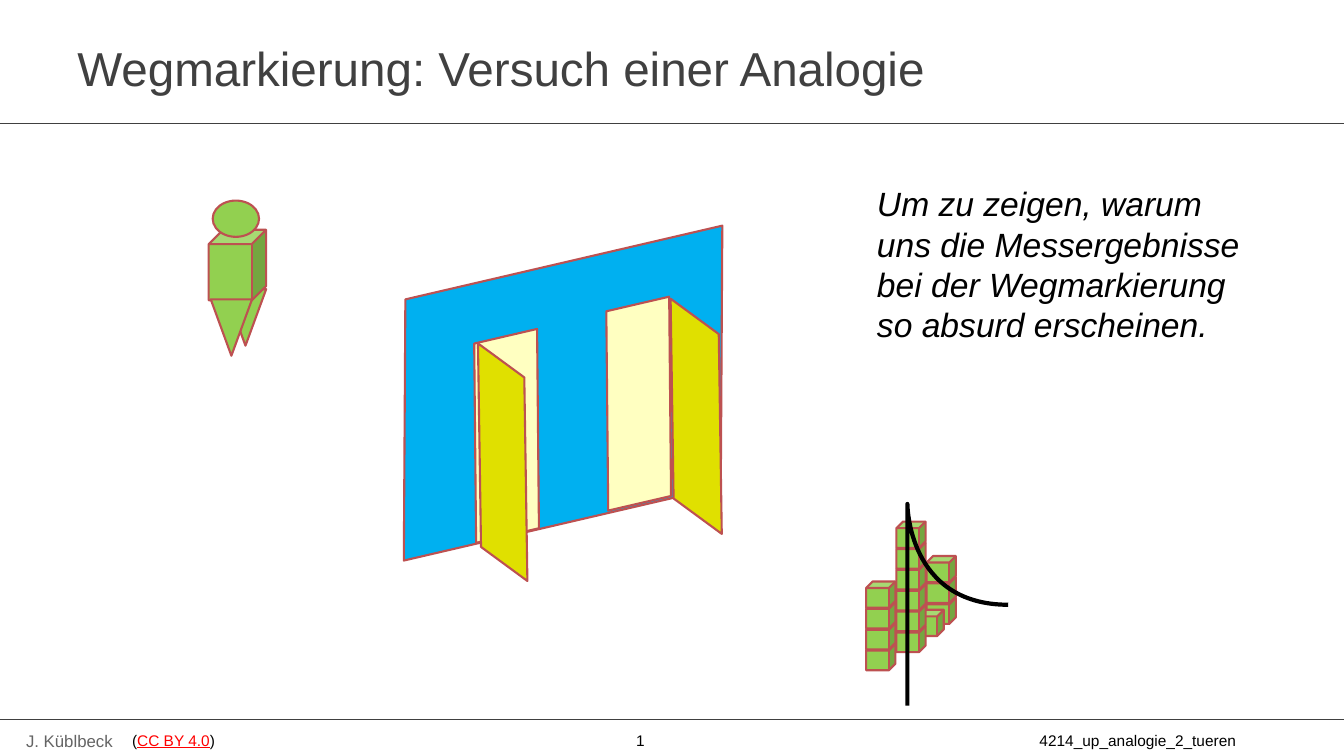
from lxml import etree
from pptx import Presentation
from pptx.dml.color import RGBColor
from pptx.enum.shapes import MSO_CONNECTOR, MSO_SHAPE
from pptx.enum.text import MSO_ANCHOR
from pptx.oxml.ns import qn
from pptx.util import Inches, Pt

COLORS = {
    "title": "404040", "rule": "404040", "author": "646464", "text": "000000",
    "link": "FF0000", "outline": "BD5151", "green": "92D050", "wall": "00B0F0",
    "opening": "FFFFC1", "door": "E0E000",
}
CUBE = (0.29, 0.26)
CUBE_STEP = 0.207


def rgb(name):
    return RGBColor.from_string(COLORS[name])


def style_font(font, size, color, italic=None):
    font.name = "Arial"
    font.size = Pt(size)
    font.italic = italic
    font.color.rgb = rgb(color)


def add_text(slide, box, text, size, color, italic=None, anchor=MSO_ANCHOR.TOP):
    tb = slide.shapes.add_textbox(*map(Inches, box))
    tf = tb.text_frame
    tf.word_wrap = True
    tf.vertical_anchor = anchor
    p = tf.paragraphs[0]
    p.text = text
    style_font(p.font, size, color, italic)
    return tf


def add_rule(slide, y):
    line = slide.shapes.add_connector(
        MSO_CONNECTOR.STRAIGHT, 0, Inches(y), Inches(13.33), Inches(y))
    line.line.color.rgb = rgb("rule")
    line.line.width = Pt(0.75)
    etree.SubElement(line._element.spPr, qn("a:effectLst"))


def add_part(group, kind, box, fill, rotation=0, flip=None, adj=None):
    """Add an outlined preset shape; flip is 'flipH' or 'flipV'."""
    sp = group.shapes.add_shape(kind, *map(Inches, box))
    sp.shadow.inherit = False
    sp.fill.solid()
    sp.fill.fore_color.rgb = rgb(fill)
    sp.line.color.rgb = rgb("outline")
    sp.line.width = Pt(1.5)
    sp.rotation = rotation
    if adj is not None:
        sp.adjustments[0] = adj
    if flip:
        sp._element.spPr.find(qn("a:xfrm")).set(flip, "1")


def add_figure(slide, x, y):
    group = slide.shapes.add_group_shape()
    leg = (0.41, 0.56)
    add_part(group, MSO_SHAPE.ISOSCELES_TRIANGLE, (x + 0.16, y + 0.88, *leg), "green", flip="flipV")
    add_part(group, MSO_SHAPE.CUBE, (x, y + 0.29, 0.57, 0.7), "green")
    add_part(group, MSO_SHAPE.OVAL, (x + 0.04, y, 0.46, 0.36), "green")
    add_part(group, MSO_SHAPE.ISOSCELES_TRIANGLE, (x + 0.02, y + 0.98, *leg), "green", flip="flipV")


def add_wall_with_doors(slide, x, y):
    group = slide.shapes.add_group_shape()
    kind = MSO_SHAPE.PARALLELOGRAM
    tilt = 346.9
    add_part(group, kind, (x, y, 3.83, 2.52), "wall", tilt, adj=0.239)
    for dx, dy in ((0.82, 0.72), (2.13, 0.4)):
        add_part(group, kind, (x + dx, y + dy, 1.07, 1.93), "opening", tilt, adj=0.402)
    for dx, dy, height in ((0.42, 1.14, 1.61), (2.34, 0.7, 1.58)):
        add_part(group, kind, (x + dx, y + dy, 1.79, height), "door", 216.3, "flipH", 0.758)


def add_curve(group, points):
    """Draw a Bezier curve: a start point, then triples of two controls and an end."""
    builder = group.shapes.build_freeform(*points[0], scale=Inches(1))
    builder.add_line_segments(points[1:], close=False)
    sp = builder.convert_to_shape()
    sp.shadow.inherit = False
    sp.fill.background()
    sp.line.color.rgb = rgb("text")
    sp.line.width = Pt(3)
    path = next(sp._element.iter(qn("a:path")))
    segments = path.findall(qn("a:lnTo"))
    for i in range(0, len(segments), 3):
        curve = etree.SubElement(path, qn("a:cubicBezTo"))
        for segment in segments[i:i + 3]:
            curve.append(segment[0])
            path.remove(segment)


def add_histogram(slide, x, y):
    group = slide.shapes.add_group_shape()
    # left offset, top offset of the lowest cube, number of cubes
    for dx, dy, count in ((0.61, 0.75, 3), (0.49, 0.87, 1), (0.31, 1.03, 6), (0.01, 1.21, 4)):
        for level in range(count):
            top = y + dy - level * CUBE_STEP
            add_part(group, MSO_SHAPE.CUBE, (x + dx, top, *CUBE), "green")
    offsets = [
        (0, 1.35),
        (0.06, 1), (0.05, 0.66), (0.12, 0.64),
        (0.18, 0.61), (0.33, 1.31), (0.39, 1.21),
        (0.45, 1.12), (0.43, 0.1), (0.47, 0.06),
        (0.52, 0.01), (0.6, 0.91), (0.65, 0.94),
        (0.69, 0.97), (0.71, 0.27), (0.76, 0.25),
        (0.8, 0.24), (0.87, 0.53), (0.93, 0.83),
    ]
    add_curve(group, [(x + dx, y + dy) for dx, dy in offsets])


def add_footer(slide, y):
    add_rule(slide, y)
    add_text(slide, (0.16, y + 0.06, 1.55, 0.3), "J. Küblbeck", 12, "author")
    tf = add_text(slide, (1.31, y + 0.11, 11.86, 0.19), "", 11, "text")
    tf.margin_left = tf.margin_top = tf.margin_right = tf.margin_bottom = 0
    p = tf.paragraphs[0]
    for text, color in (("(", "text"), ("CC BY 4.0", "link"),
                        (")\t1\t4214_up_analogie_2_tueren", "text")):
        r = p.add_run()
        r.text = text
        style_font(r.font, 11, color)
        r.font.underline = color == "link"
    tabs = etree.Element(qn("a:tabLst"))
    for position in (5, 9):
        etree.SubElement(tabs, qn("a:tab"), pos=str(Inches(position)), algn="l")
    p._p.get_or_add_pPr().insert(0, tabs)


def main():
    prs = Presentation()
    prs.slide_width, prs.slide_height = Inches(13.33), Inches(7.5)
    s = prs.slides.add_slide(prs.slide_layouts[6])
    add_footer(s, 7.14)
    add_rule(s, 1.23)
    add_text(s, (0.67, 0.35, 12, 0.63), "Wegmarkierung: Versuch einer Analogie",
             34, "title", anchor=MSO_ANCHOR.MIDDLE)
    add_figure(s, 2.07, 1.99)
    add_wall_with_doors(s, 3.67, 2.64)
    add_histogram(s, 8.58, 5.18)
    add_text(s, (8.6, 1.77, 3.86, 1.72),
             "Um zu zeigen, warum uns die Messergebnisse bei der Wegmarkierung \v"
             "so absurd erscheinen.", 24, "text", italic=True)
    prs.save("out.pptx")


if __name__ == "__main__":
    main()
